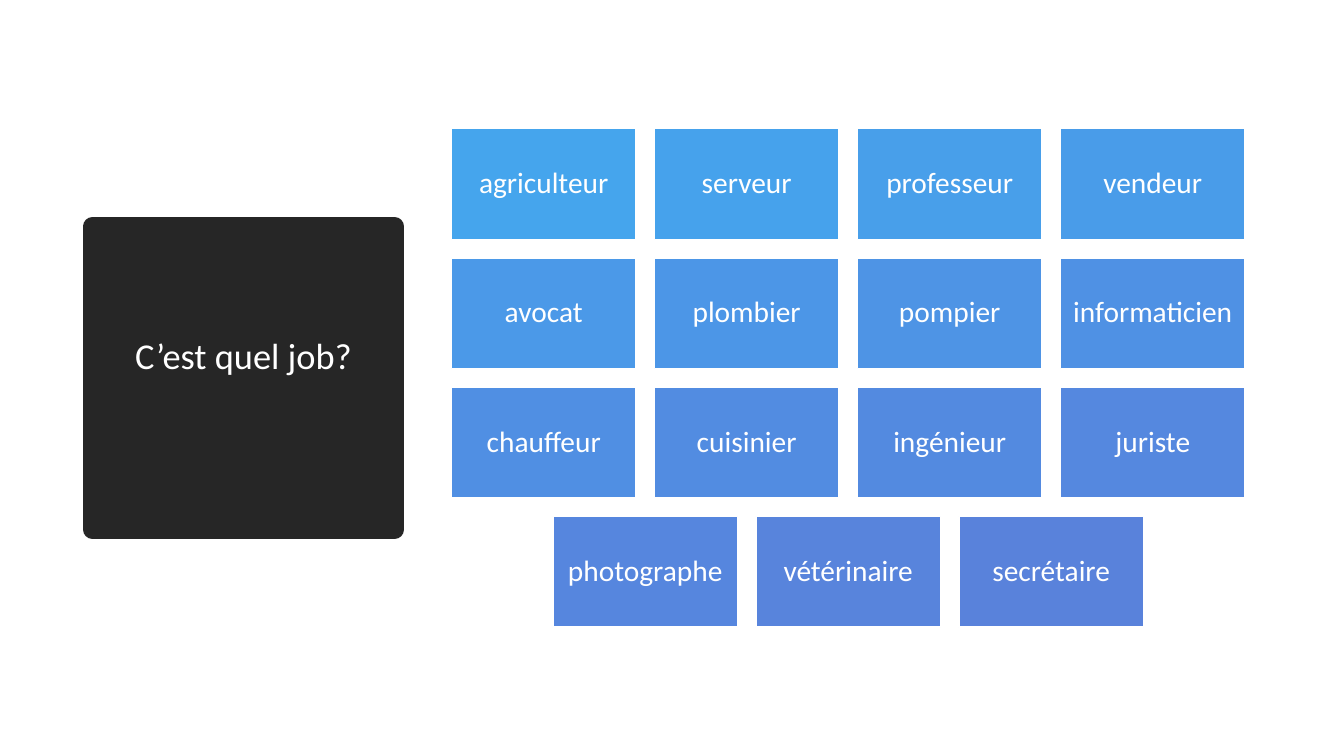
"""Build a French vocabulary slide: a title block beside a grid of job names."""
import colorsys
from dataclasses import dataclass

from pptx import Presentation
from pptx.dml.color import RGBColor
from pptx.enum import shapes, text
from pptx.util import Pt


@dataclass(frozen=True)
class Theme:
    font: str = "Calibri"
    title_size: float = 26
    job_size: float = 21
    ink: str = "FFFFFF"
    block: str = "262626"
    first_job: str = "45A5ED"
    last_job: str = "5982DB"

    def job_fill(self, share):
        ends = [colorsys.rgb_to_hls(*(part / 255 for part in RGBColor.from_string(end)))
                for end in (self.first_job, self.last_job)]
        blend = [start + (stop - start) * share for start, stop in zip(*ends)]
        return str(RGBColor(*(round(part * 255) for part in colorsys.hls_to_rgb(*blend))))


class JobSlide:
    def __init__(self, deck, theme):
        self.theme = theme
        self.slide = deck.slides.add_slide(deck.slide_layouts[5])

    def style(self, part, wording, size, fill, line, line_width, insets):
        part.fill.solid()
        part.fill.fore_color.rgb = RGBColor.from_string(fill)
        part.line.color.rgb = RGBColor.from_string(line)
        part.line.width = Pt(line_width)
        frame = part.text_frame
        frame.text = wording
        frame.word_wrap = True
        frame.auto_size = text.MSO_AUTO_SIZE.NONE
        frame.vertical_anchor = text.MSO_ANCHOR.MIDDLE
        (frame.margin_left, frame.margin_top,
         frame.margin_right, frame.margin_bottom) = map(Pt, insets)
        paragraph = frame.paragraphs[0]
        paragraph.alignment = text.PP_ALIGN.CENTER
        paragraph.line_spacing = 0.9
        paragraph.font.name = self.theme.font
        paragraph.font.size = Pt(size)
        paragraph.font.color.rgb = RGBColor.from_string(self.theme.ink)

    def title(self, wording, left, top, side):
        heading = self.slide.shapes.title
        heading.left, heading.top = Pt(left), Pt(top)
        heading.width = heading.height = Pt(side)
        self.style(heading, wording, self.theme.title_size, self.theme.block,
                   self.theme.block, 13.75, (7.2, 3.6, 7.2, 32))

    def job(self, wording, left, top, width, height, fill):
        tile = self.slide.shapes.add_shape(
            shapes.MSO_SHAPE.RECTANGLE, Pt(left), Pt(top), Pt(width), Pt(height))
        tile.shadow.inherit = False
        self.style(tile, wording, self.theme.job_size, fill, self.theme.ink, 1, (6.3,) * 4)

    def job_grid(self, rows, left, top, width, height, gap):
        columns = max(map(len, rows))
        last = sum(map(len, rows)) - 1
        index = 0
        for row, jobs in enumerate(rows):
            indent = (columns - len(jobs)) * (width + gap) / 2
            for column, wording in enumerate(jobs):
                self.job(wording, left + indent + column * (width + gap),
                         top + row * (height + gap), width, height,
                         self.theme.job_fill(index / last))
                index += 1


def main():
    deck = Presentation()
    deck.slide_width, deck.slide_height = Pt(960), Pt(540)
    page = JobSlide(deck, Theme())
    page.title("C’est quel job?", left=66, top=162, side=216)
    page.job_grid([
        ["agriculteur", "serveur", "professeur", "vendeur"],
        ["avocat", "plombier", "pompier", "informaticien"],
        ["chauffeur", "cuisinier", "ingénieur", "juriste"],
        ["photographe", "vétérinaire", "secrétaire"],
    ], left=322.5, top=92, width=131.8, height=79.1, gap=13.2)
    deck.save("out.pptx")


if __name__ == "__main__":
    main()
